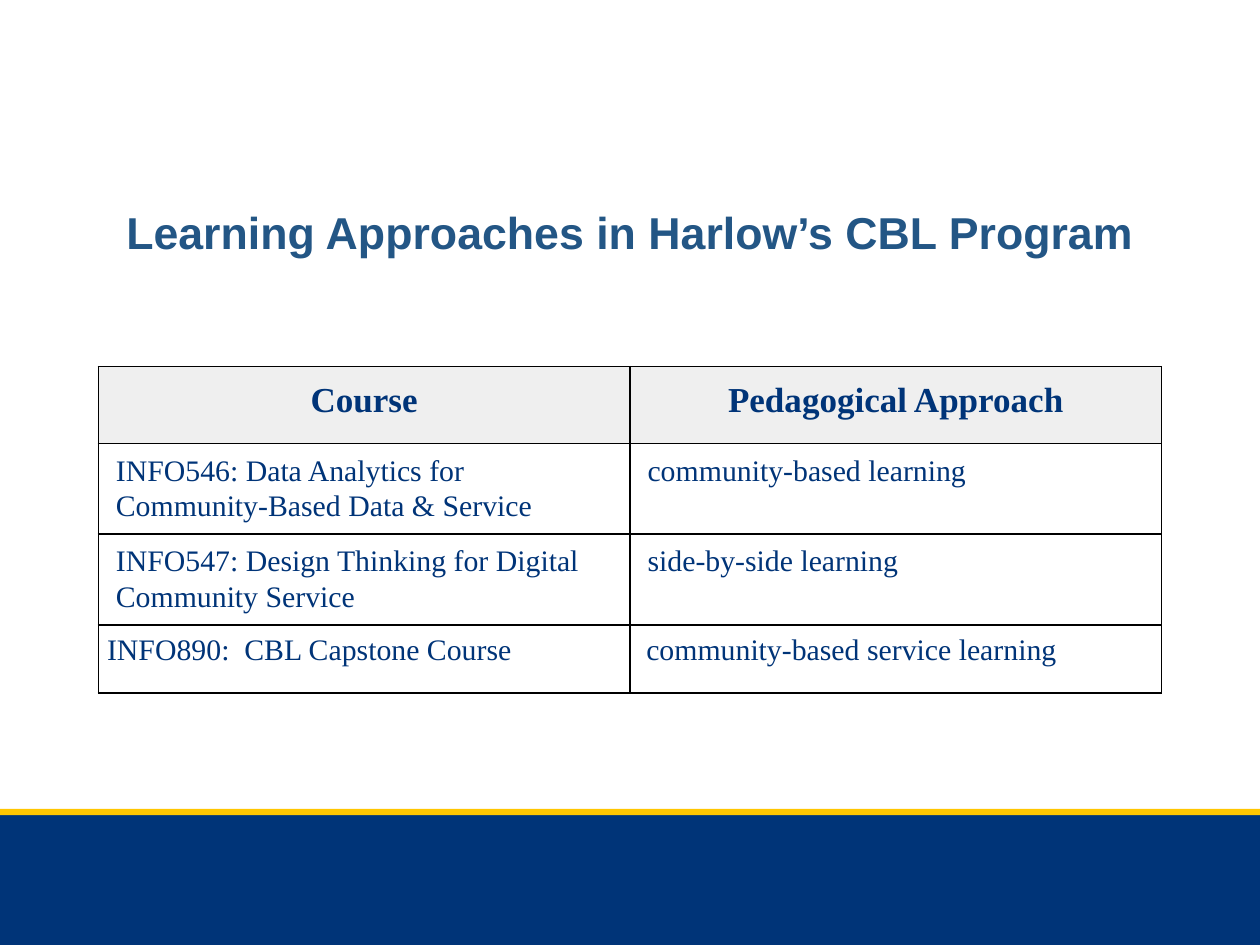
from lxml.etree import SubElement
from pptx import Presentation
from pptx.dml.color import RGBColor
from pptx.enum.shapes import MSO_SHAPE
from pptx.enum.text import MSO_ANCHOR, PP_ALIGN
from pptx.oxml.ns import qn
from pptx.util import Inches, Pt

# Content
TITLE = "Learning Approaches in Harlow’s CBL Program"
HEADER = ("Course", "Pedagogical Approach")
COURSES = [
    ("INFO546: Data Analytics for Community-Based Data & Service", "community-based learning"),
    ("INFO547: Design Thinking for Digital Community Service", "side-by-side learning"),
    ("INFO890:  CBL Capstone Course", "community-based service learning"),
]

# Layout and formats, in inches and points
WIDTH, HEIGHT = 10, 7.5
NAVY, GOLD, BLACK = "003478", "FFC600", "000000"
BANDS = [(6.47, HEIGHT - 6.47, NAVY), (6.42, 0.05, GOLD)]
TITLE_BOX = {"left": 0.69, "top": 1.32, "width": 8.62, "height": 1.09}
TABLE_LEFT, TABLE_TOP, COLUMN_WIDTH = 0.78, 2.91, 4.22
ROW_HEIGHTS = [0.61, 0.72, 0.72, 0.54]
PADDING = 0.07
TITLE_FONT = {"name": "Arial", "size": Pt(25.5), "bold": True}
HEADER_FONT = {"name": "Times New Roman", "size": Pt(20), "bold": True}
BODY_FONT = {"name": "Times New Roman", "size": Pt(17), "bold": False}
HEADER_PARA = {"alignment": PP_ALIGN.CENTER, "line_spacing": 1.15}
BODY_PARA = {"alignment": PP_ALIGN.LEFT, "line_spacing": 1.07}
LAST_PARA = {"alignment": PP_ALIGN.LEFT, "line_spacing": 1.0}
ROW_STYLES = [(HEADER_PARA, HEADER_FONT, (0, 0)), (BODY_PARA, BODY_FONT, (0.07, 0.07)),
              (BODY_PARA, BODY_FONT, (0.07, 0.07)), (LAST_PARA, BODY_FONT, (0, 0.06))]


def rgb(value):
    return RGBColor.from_string(value)


def apply(target, values):
    for name, value in values.items():
        setattr(target, name, value)


def set_margins(target, side, vertical):
    apply(target, {"margin_left": Inches(side), "margin_right": Inches(side),
                   "margin_top": Inches(vertical), "margin_bottom": Inches(vertical)})


def write(frame, text, para_format, font, color):
    para = frame.paragraphs[0]
    apply(para, para_format)
    span = para.add_run()
    span.text = text
    apply(span.font, font)
    span.font.color.rgb = rgb(color)
    return para


def add_borders(cell):
    properties = cell._tc.get_or_add_tcPr()
    for position, side in enumerate(("lnL", "lnR", "lnT", "lnB")):
        line = SubElement(properties, qn(f"a:{side}"), w=str(Pt(1)))
        fill = SubElement(line, qn("a:solidFill"))
        SubElement(fill, qn("a:srgbClr"), val=BLACK)
        properties.insert(position, line)


def add_bands(page):
    for top, height, color in BANDS:
        band = page.shapes.add_shape(MSO_SHAPE.RECTANGLE, 0, Inches(top),
                                     Inches(WIDTH), Inches(height))
        band.shadow.inherit = False
        band.fill.solid()
        band.fill.fore_color.rgb = rgb(color)
        band.line.fill.background()


def add_title(page):
    title = page.shapes.title
    apply(title, {name: Inches(value) for name, value in TITLE_BOX.items()})
    frame = title.text_frame
    frame.word_wrap = True
    frame.vertical_anchor = MSO_ANCHOR.MIDDLE
    set_margins(frame, 0.07, 0.04)
    write(frame, TITLE, {"alignment": PP_ALIGN.CENTER, "line_spacing": 0.9},
          TITLE_FONT, "235685")


def add_course_table(page):
    rows = [HEADER, *COURSES]
    table = page.shapes.add_table(
        len(rows), len(HEADER), Inches(TABLE_LEFT), Inches(TABLE_TOP),
        Inches(COLUMN_WIDTH * len(HEADER)), Inches(sum(ROW_HEIGHTS))).table
    for column in table.columns:
        column.width = Inches(COLUMN_WIDTH)
    for r, (texts, (para_format, font, indents)) in enumerate(zip(rows, ROW_STYLES)):
        table.rows[r].height = Inches(ROW_HEIGHTS[r])
        for c, (text, indent) in enumerate(zip(texts, indents)):
            cell = table.cell(r, c)
            set_margins(cell, PADDING, PADDING)
            cell.fill.solid()
            cell.fill.fore_color.rgb = rgb("FFFFFF" if r else "EFEFEF")
            add_borders(cell)
            para = write(cell.text_frame, text, para_format, font, NAVY)
            para._p.get_or_add_pPr().set("marL", str(Inches(indent)))


def main():
    deck = Presentation()
    deck.slide_width, deck.slide_height = Inches(WIDTH), Inches(HEIGHT)
    page = deck.slides.add_slide(deck.slide_layouts[5])
    add_bands(page)
    add_title(page)
    add_course_table(page)
    deck.save("out.pptx")


if __name__ == "__main__":
    main()
